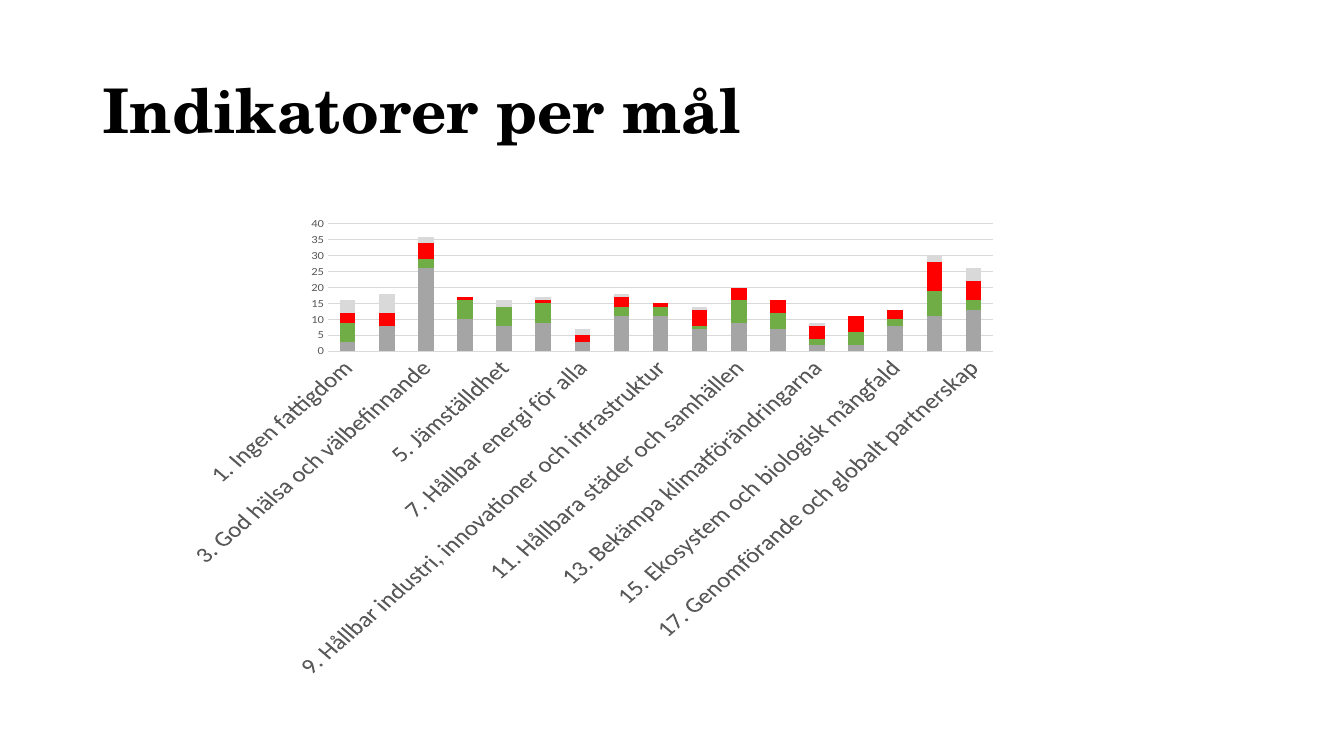
from pptx import Presentation
from pptx import util as u
from pptx.chart import data as chart_data
from pptx.dml import color
from pptx.enum import chart as ch, text

COLORS = {
    "title": "000000",
    "label": "595959",
    "grid": "D9D9D9",
}


def rgb(name):
    return color.RGBColor.from_string(COLORS[name])


goals = [
    "1. Ingen fattigdom",
    "2. Ingen hunger",
    "3. God hälsa och välbefinnande",
    "4. God utbildning för alla",
    "5. Jämställdhet",
    "6. Rent vatten och sanitet för alla",
    "7. Hållbar energi för alla",
    "8. Anständig arbetsvillkor och ekonomisk tillväxt",
    "9. Hållbar industri, innovationer och infrastruktur",
    "10. Minskad ojämlikhet",
    "11. Hållbara städer och samhällen",
    "12. Hållbar konsumtion och produktion",
    "13. Bekämpa klimatförändringarna",
    "14. Hav och marina resurser",
    "15. Ekosystem och biologisk mångfald",
    "16. Fredliga och inkluderande samhällen",
    "17. Genomförande och globalt partnerskap",
]
indicator_counts = [
    ("A5A5A5", [3, 8, 26, 10, 8, 9, 3, 11, 11, 7, 9, 7, 2, 2, 8, 11, 13]),
    ("70AD47", [6, 0, 3, 6, 6, 6, 0, 3, 3, 1, 7, 5, 2, 4, 2, 8, 3]),
    ("FF0000", [3, 4, 5, 1, 0, 1, 2, 3, 1, 5, 4, 4, 4, 5, 3, 9, 6]),
    ("D9D9D9", [4, 6, 2, 0, 2, 1, 2, 1, 0, 1, 0, 0, 1, 0, 0, 2, 4]),
]

prs = Presentation()
prs.slide_width, prs.slide_height = u.Cm(33.87), u.Cm(19.05)
slide = prs.slides.add_slide(prs.slide_layouts[5])

# Title
title = slide.shapes.title
title.left, title.top = u.Cm(2.33), u.Cm(1.01)
title.width, title.height = u.Cm(29.21), u.Cm(3.68)
title.text_frame.text = "Indikatorer per mål"
title.text_frame.vertical_anchor = text.MSO_ANCHOR.MIDDLE
heading = title.text_frame.paragraphs[0]
heading.alignment = text.PP_ALIGN.LEFT
heading.line_spacing = 0.9
heading.font.name = "TeX Gyre Schola"
heading.font.size = u.Pt(44)
heading.font.bold = True
heading.font.color.rgb = rgb("title")

# Stacked columns: one column per goal
indicators = chart_data.CategoryChartData()
indicators.categories = goals
for number, (_, counts) in enumerate(indicator_counts, 1):
    indicators.add_series(f"Series {number}", counts)

chart = slide.shapes.add_chart(
    ch.XL_CHART_TYPE.COLUMN_STACKED,
    u.Cm(4.32), u.Cm(5.44), u.Cm(21.13), u.Cm(11.68), indicators,
).chart
chart.has_legend = False
chart.has_title = False
chart.font.name = "Calibri"
chart.font.size = u.Pt(10)

columns = chart.plots[0]
columns.gap_width = 150
columns.overlap = 100
columns.vary_by_categories = False
for series, (fill, _) in zip(columns.series, indicator_counts):
    series.format.fill.solid()
    series.format.fill.fore_color.rgb = color.RGBColor.from_string(fill)

goal_axis, count_axis = chart.category_axis, chart.value_axis
for axis, size in ((goal_axis, 18), (count_axis, 9)):
    axis.major_tick_mark = axis.minor_tick_mark = ch.XL_TICK_MARK.NONE
    labels = axis.tick_labels.font
    labels.name = "Calibri"
    labels.size = u.Pt(size)
    labels.color.rgb = rgb("label")

# Automatic label rotation
label_body = goal_axis._element.txPr.bodyPr
label_body.set("rot", "-60000000")
label_body.set("vert", "horz")

count_axis.has_major_gridlines = True
count_axis.format.line.fill.background()
for line in (goal_axis.format.line, count_axis.major_gridlines.format.line):
    line.width = u.Pt(0.75)
    line.color.rgb = rgb("grid")

prs.save("out.pptx")
